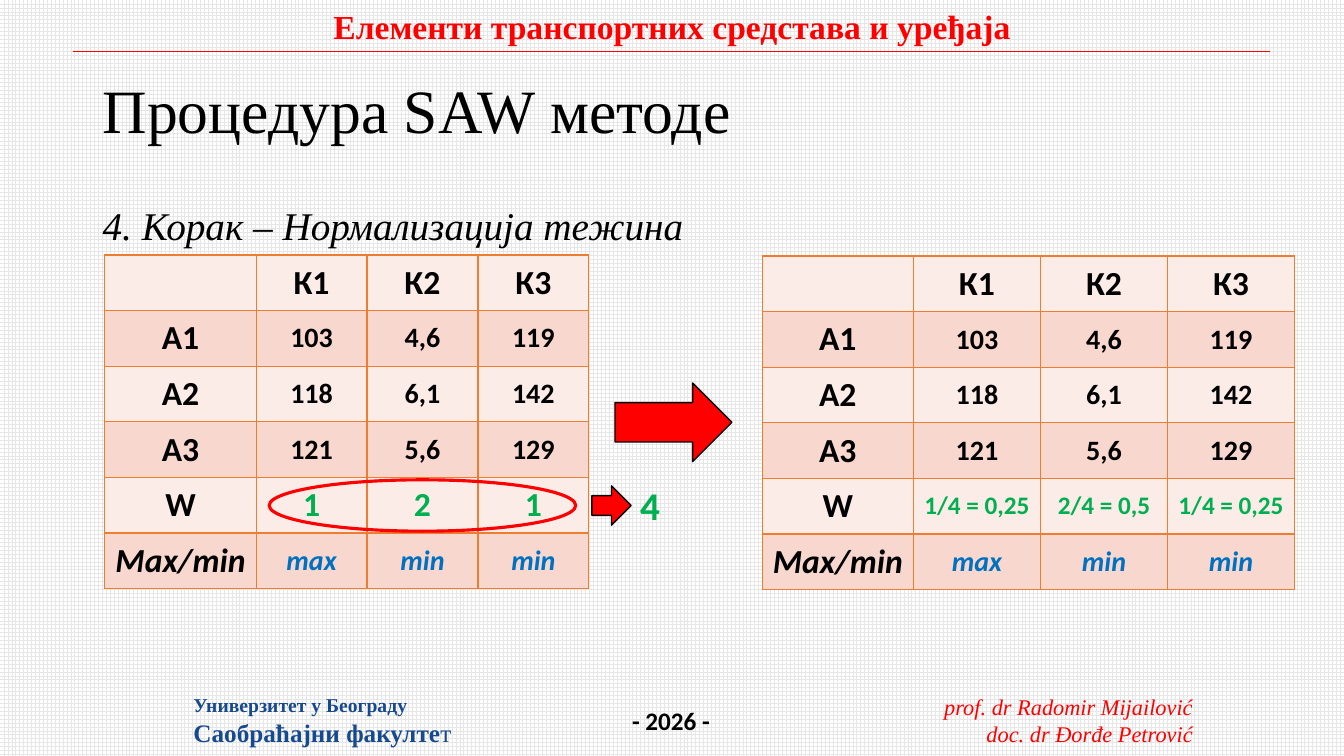
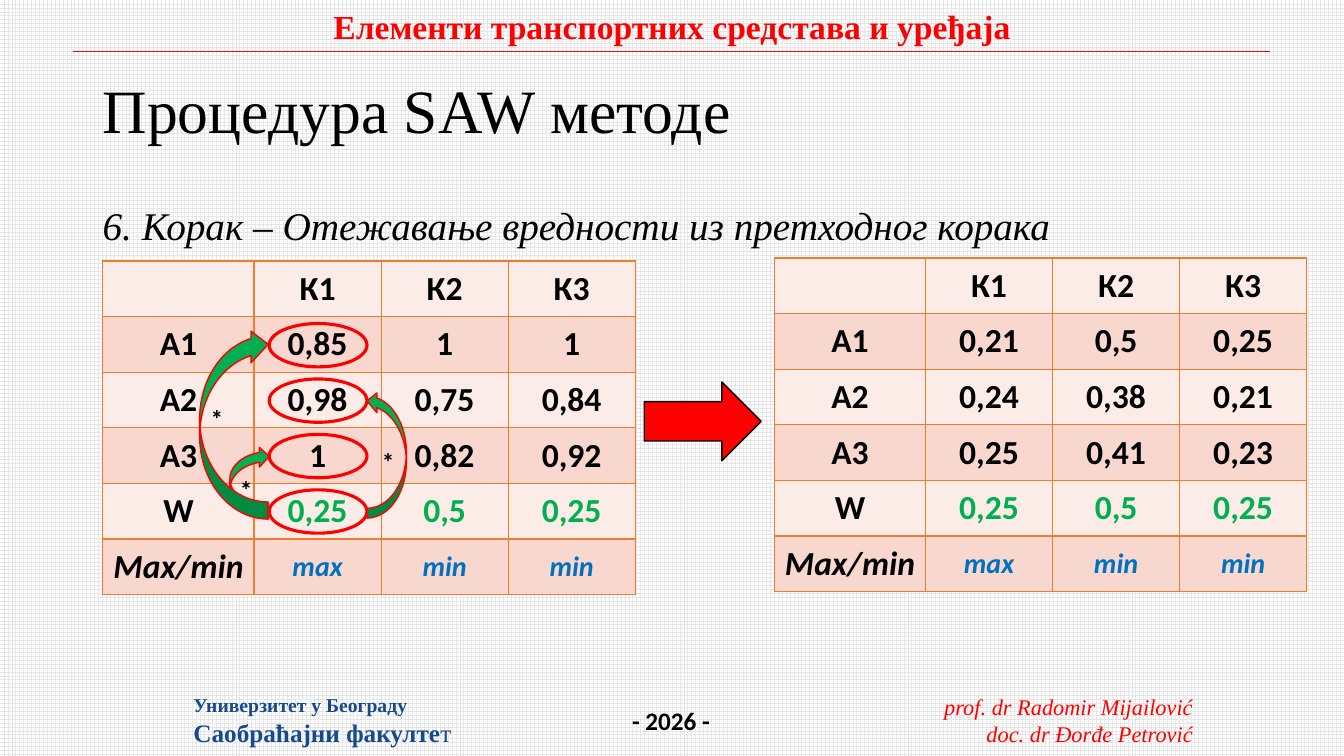
"""Build two slides on the steps of the SAW method."""
import pptx
import pptx.util
import pptx.dml.color
import pptx.enum.dml
import pptx.enum.shapes
import pptx.enum.text
import pptx.oxml
import pptx.oxml.ns

Inches = pptx.util.Inches
Pt = pptx.util.Pt
RGB = pptx.dml.color.RGBColor
SHAPE = pptx.enum.shapes.MSO_SHAPE
ALIGN = pptx.enum.text.PP_ALIGN
ANCHOR = pptx.enum.text.MSO_ANCHOR
AUTO = pptx.enum.text.MSO_AUTO_SIZE

RED = RGB(0xFF, 0x00, 0x00)
GREEN = RGB(0x00, 0xB0, 0x50)
BLUE = RGB(0x00, 0x70, 0xC0)
NAVY = RGB(0x16, 0x49, 0x8E)
ORANGE = RGB(0xED, 0x7D, 0x31)
LIGHT = RGB(0xFC, 0xEC, 0xE8)
ROSE = RGB(0xF8, 0xD7, 0xCE)
GREY = RGB(0xE7, 0xE6, 0xE6)
WHITE = RGB(0xFF, 0xFF, 0xFF)
BLACK = RGB(0x00, 0x00, 0x00)

SERIF = "Times New Roman"
SANS = "Calibri"

HEAD = ["", "К1", "К2", "К3"]
GOALS = ["Max/min", "max", "min", "min"]
START = [["А1", "103", "4,6", "119"],
         ["А2", "118", "6,1", "142"],
         ["А3", "121", "5,6", "129"]]
NORM = [["А1", "0,85", "1", "1"],
        ["А2", "0,98", "0,75", "0,84"],
        ["А3", "1", "0,82", "0,92"]]
FINAL = [["А1", "0,21", "0,5", "0,25"],
         ["А2", "0,24", "0,38", "0,21"],
         ["А3", "0,25", "0,41", "0,23"]]
SHARES = ["W", "0,25", "0,5", "0,25"]

STEPS = [
    {"step": "4. Корак – Нормализација тежина",
     "tables": [
         {"at": (1.04, 2.53), "col": 1.1, "body": START,
          "weights": ["W", "1", "2", "1"], "size": 20},
         {"at": (7.56, 2.54), "col": 1.26, "body": START,
          "weights": ["W", "1/4 = 0,25", "2/4 = 0,5", "1/4 = 0,25"],
          "size": 20, "wsize": 18}],
     "arrows": [(5.87, 4.82, 0.39, 0.39), (6.1, 3.8, 1.16, 0.78)],
     "rings": [(2.67, 4.76, 3.04, 0.51)],
     "total": "4"},
    {"step": "6. Корак – Отежавање вредности из претходног корака",
     "tables": [
         {"at": (1.02, 2.59), "col": 1.26, "body": NORM, "weights": SHARES},
         {"at": (7.68, 2.56), "col": 1.26, "body": FINAL, "weights": SHARES}],
     "arrows": [(6.39, 3.79, 1.16, 0.78)],
     "rings": [(2.67, 3.21 + 0.55 * row, 0.97, 0.43) for row in range(4)],
     "curves": [((2.28, 4.43, 0.39, 0.69), False, 0.5),
                ((3.64, 3.88, 0.39, 1.26), True, 0.5),
                ((1.98, 3.26, 0.68, 1.89), False, 0.46)],
     "stars": [(2.28, 4.66), (3.69, 4.38), (1.99, 3.95)]},
]


def put(frame, lines, align=ALIGN.LEFT, space=None, **style):
    """Fill a text frame; a line is a string or a list of (text, changes)."""
    for num, line in enumerate(lines):
        para = frame.paragraphs[0] if num == 0 else frame.add_paragraph()
        para.alignment = align
        if space:
            para.line_spacing = space
        for words, change in [(line, {})] if isinstance(line, str) else line:
            look = {"size": 18, "face": SANS, "color": BLACK,
                    "bold": False, "italic": False, **style, **change}
            run = para.add_run()
            run.text = words
            run.font.size = Pt(look["size"])
            run.font.name = look["face"]
            run.font.color.rgb = look["color"]
            run.font.bold = look["bold"]
            run.font.italic = look["italic"]


def label(slide, box, lines, wrap=False, fit=True, anchor=ANCHOR.TOP, **style):
    """Add a text box."""
    frame = slide.shapes.add_textbox(*map(Inches, box)).text_frame
    frame.word_wrap = wrap
    frame.auto_size = AUTO.SHAPE_TO_FIT_TEXT if fit else AUTO.NONE
    frame.vertical_anchor = anchor
    put(frame, lines, **style)


def figure(slide, kind, box, fill, line, width):
    """Add a preset shape with its fill and outline."""
    shape = slide.shapes.add_shape(kind, *map(Inches, box))
    shape.shadow.inherit = False
    if fill is None:
        shape.fill.background()
    else:
        shape.fill.solid()
        shape.fill.fore_color.rgb = fill
    shape.line.color.rgb = line
    shape.line.width = Pt(width)
    return shape


def curve(slide, box, flip, bend):
    """Add a curved arrow turned half way round."""
    shape = figure(slide, SHAPE.CURVED_LEFT_ARROW, box, GREEN, RED, 1)
    shape.rotation = 180
    shape.adjustments[1] = bend
    if flip:
        shape._element.spPr.find(pptx.oxml.ns.qn("a:xfrm")).set("flipH", "1")


def border(cell):
    """Draw the four edges of a cell."""
    props = cell._tc.get_or_add_tcPr()
    for num, side in enumerate("LRTB"):
        props.insert(num, pptx.oxml.parse_xml(
            f'<a:ln{side} {pptx.oxml.ns.nsdecls("a")} w="{Pt(1)}">'
            f'<a:solidFill><a:srgbClr val="{ORANGE}"/></a:solidFill>'
            f'</a:ln{side}>'))


def cell_style(row, col, size, wsize):
    """Give the text format for a place in the table."""
    style = {"size": 24, "bold": True, "italic": row == 5}
    if col and row in (1, 2, 3):
        style["size"] = size
    elif col and row == 4:
        style.update(size=wsize, color=GREEN)
    elif col and row == 5:
        style.update(size=20, color=BLUE)
    return style


def matrix(slide, at, col, body, weights, size=24, wsize=24):
    """Add a decision table."""
    rows = [HEAD, *body, weights, GOALS]
    widths = [1.5] + [col] * 3
    table = slide.shapes.add_table(
        len(rows), len(widths), *map(Inches, (*at, sum(widths), 3.31))).table
    table.first_row = table.horz_banding = False
    for num, width in enumerate(widths):
        table.columns[num].width = Inches(width)
    for row, items in enumerate(rows):
        for num, words in enumerate(items):
            cell = table.cell(row, num)
            cell.vertical_anchor = ANCHOR.MIDDLE
            cell.fill.solid()
            cell.fill.fore_color.rgb = ROSE if row % 2 else LIGHT
            border(cell)
            if words:
                put(cell.text_frame, [words], align=ALIGN.CENTER,
                    **cell_style(row, num, size, wsize))


def base(deck, step):
    """Add a slide with the shared header, title and footer."""
    slide = deck.slides.add_slide(deck.slide_layouts[6])
    fill = slide.background.fill
    fill.patterned()
    fill.pattern = pptx.enum.dml.MSO_PATTERN.LARGE_GRID
    fill.fore_color.rgb = GREY
    fill.back_color.rgb = WHITE
    label(slide, (9.22, 6.83, 2.71, 0.64),
          ["prof. dr Radomir Mijailović", "doc. dr Đorđe Petrović"],
          align=ALIGN.RIGHT, size=16, face=SERIF, color=RED, italic=True)
    rule = slide.shapes.add_connector(
        pptx.enum.shapes.MSO_CONNECTOR.STRAIGHT,
        *map(Inches, (0.72, 0.51, 12.6, 0.51)))
    rule.line.color.rgb = RED
    rule.line.width = Pt(0.5)
    rule._element.spPr.append(pptx.oxml.parse_xml(
        f'<a:effectLst {pptx.oxml.ns.nsdecls("a")}/>'))
    label(slide, (3.17, 0.01, 6.99, 0.5),
          ["Елементи транспортних средстава и уређаја"],
          align=ALIGN.CENTER, size=24, face=SERIF, color=RED, bold=True)
    label(slide, (6.17, 6.95, 0.98, 0.4), ["- 2026 -"], bold=True)
    label(slide, (1.82, 6.83, 2.79, 0.64),
          [[("Универзитет у Београду", {"size": 14})],
           [("Саобраћајни факулте", {}), ("т", {"bold": False})]],
          face=SERIF, color=NAVY, bold=True)
    label(slide, (0.92, 0.4, 11.5, 1.45), ["Процедура SAW методе"],
          wrap=True, fit=False, anchor=ANCHOR.MIDDLE, space=0.9,
          size=44, face=SERIF)
    label(slide, (0.92, 2, 11.5, 4.76), [step], wrap=True, fit=False,
          space=0.9, size=28, face=SERIF, italic=True)
    return slide


def main():
    """Build and save the deck."""
    deck = pptx.Presentation()
    deck.slide_width = Inches(13.33)
    deck.slide_height = Inches(7.5)
    for part in STEPS:
        slide = base(deck, part["step"])
        for table in part["tables"]:
            matrix(slide, **table)
        for box in part["arrows"]:
            figure(slide, SHAPE.RIGHT_ARROW, box, RED, BLACK, 1)
        for box in part["rings"]:
            figure(slide, SHAPE.OVAL, box, None, RED, 2.25)
        for item in part.get("curves", []):
            curve(slide, *item)
        for spot in part.get("stars", []):
            label(slide, (*spot, 0.33, 0.4), ["*"], bold=True)
        if "total" in part:
            label(slide, (6.25, 4.73, 0.43, 0.57), [part["total"]],
                  wrap=True, size=28, color=GREEN, bold=True)
    deck.save("out.pptx")


if __name__ == "__main__":
    main()
